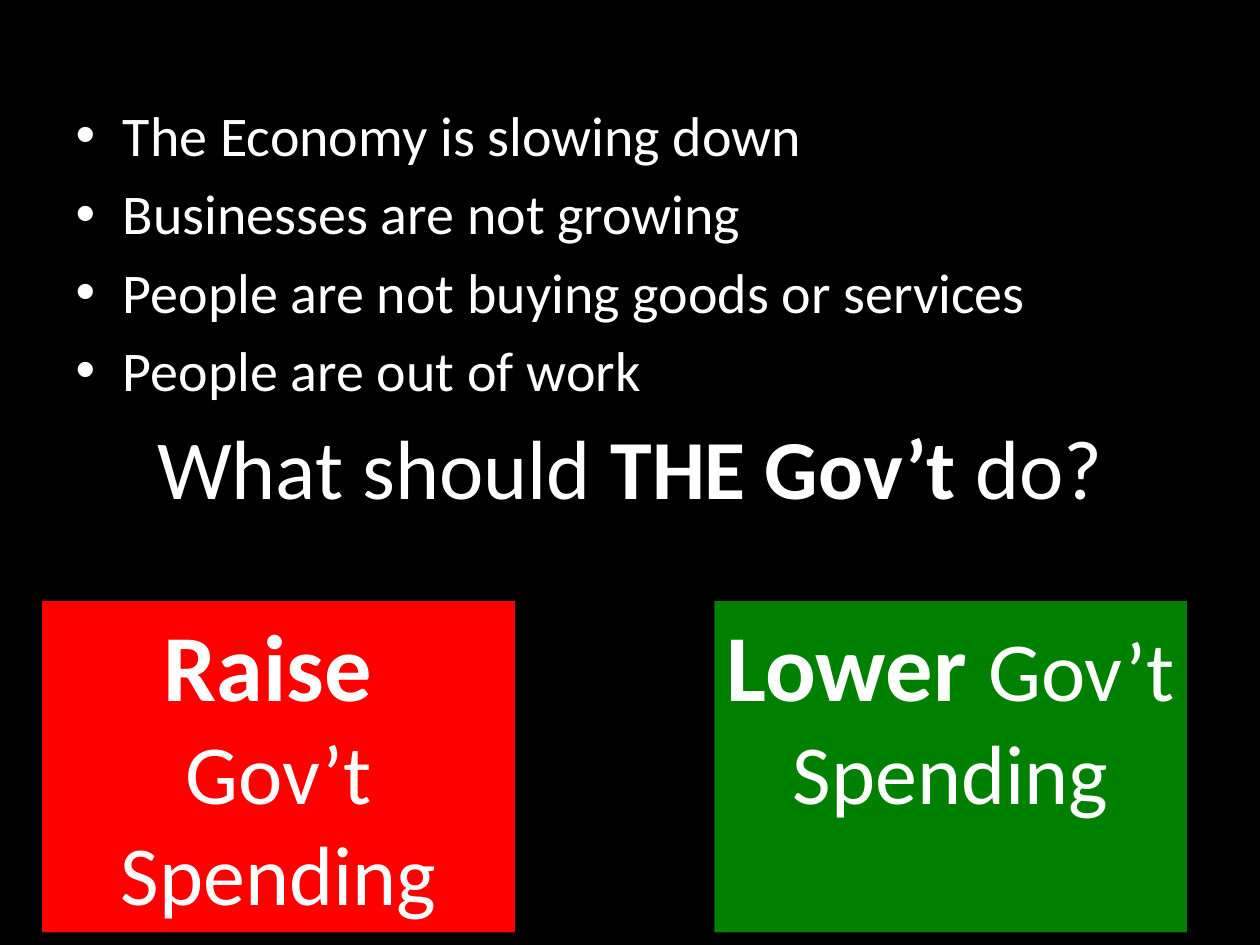
from pptx import Presentation
from pptx.dml.color import RGBColor
from pptx.enum.shapes import MSO_SHAPE
from pptx.enum.text import MSO_ANCHOR, MSO_AUTO_SIZE, PP_ALIGN
from pptx.util import Cm, Pt

RECTANGLE = MSO_SHAPE.RECTANGLE
CENTER = PP_ALIGN.CENTER
TOP = MSO_ANCHOR.TOP
NO_FIT = MSO_AUTO_SIZE.NONE

THEME = {
    "font": "Calibri",
    "background": RGBColor(0, 0, 0),
    "text": RGBColor(255, 255, 255),
    "raise": RGBColor(255, 0, 0),
    "lower": RGBColor(0, 128, 0),
    "bullet": Pt(32),
    "large": Pt(48),
    "emphasis": Pt(54),
}

SYMPTOMS = [
    "The Economy is slowing down",
    "Businesses are not growing",
    "People are not buying goods or services",
    "People are out of work",
]

# Each paragraph is a list of (text, size, bold) runs.
QUESTION = [[("What should ", "large", False),
             ("THE Gov’t ", "large", True),
             ("do?", "large", False)]]
OPTIONS = [
    ("raise", [[("Raise ", "emphasis", True)],
               [("Gov’t Spending", "large", False)]]),
    ("lower", [[("Lower ", "emphasis", True),
                ("Gov’t Spending", "large", False)]]),
]

OPTION_LEFT, OPTION_TOP = Cm(0.85), Cm(12.12)
OPTION_WIDTH, OPTION_HEIGHT = Cm(9.53), Cm(6.68)
OPTION_PITCH = Cm(13.55)


def format_run(run, size, bold=False):
    run.font.name = THEME["font"]
    run.font.size = THEME[size]
    run.font.bold = bold
    run.font.color.rgb = THEME["text"]


def write_centered(frame, paragraphs):
    for index, runs in enumerate(paragraphs):
        paragraph = frame.add_paragraph() if index else frame.paragraphs[0]
        paragraph.alignment = CENTER
        for text, size, bold in runs:
            run = paragraph.add_run()
            run.text = text
            format_run(run, size, bold)


def add_symptoms(slide):
    body = slide.placeholders[1]
    body.left, body.top = Cm(1.27), Cm(1.9)
    body.width, body.height = Cm(22.86), Cm(6.15)
    frame = body.text_frame
    frame.text = "\n".join(SYMPTOMS)
    frame.auto_size = NO_FIT
    for paragraph in frame.paragraphs:
        format_run(paragraph.runs[0], "bullet")


def add_question(slide):
    box = slide.shapes.add_textbox(Cm(2.82), Cm(8.26), Cm(19.76), Cm(2.31))
    box.text_frame.word_wrap = False
    write_centered(box.text_frame, QUESTION)


def add_options(slide):
    for index, (color, paragraphs) in enumerate(OPTIONS):
        option = slide.shapes.add_shape(
            RECTANGLE, OPTION_LEFT + index * OPTION_PITCH, OPTION_TOP,
            OPTION_WIDTH, OPTION_HEIGHT)
        option.shadow.inherit = False
        option.fill.solid()
        option.fill.fore_color.rgb = THEME[color]
        option.line.fill.background()
        option.text_frame.word_wrap = True
        option.text_frame.vertical_anchor = TOP
        write_centered(option.text_frame, paragraphs)


def main():
    deck = Presentation()
    deck.slide_width, deck.slide_height = Cm(25.4), Cm(19.05)
    slide = deck.slides.add_slide(deck.slide_layouts[1])
    slide.background.fill.solid()
    slide.background.fill.fore_color.rgb = THEME["background"]
    empty_title = slide.shapes.title.element
    empty_title.getparent().remove(empty_title)
    add_symptoms(slide)
    add_question(slide)
    add_options(slide)
    deck.save("out.pptx")


if __name__ == "__main__":
    main()
